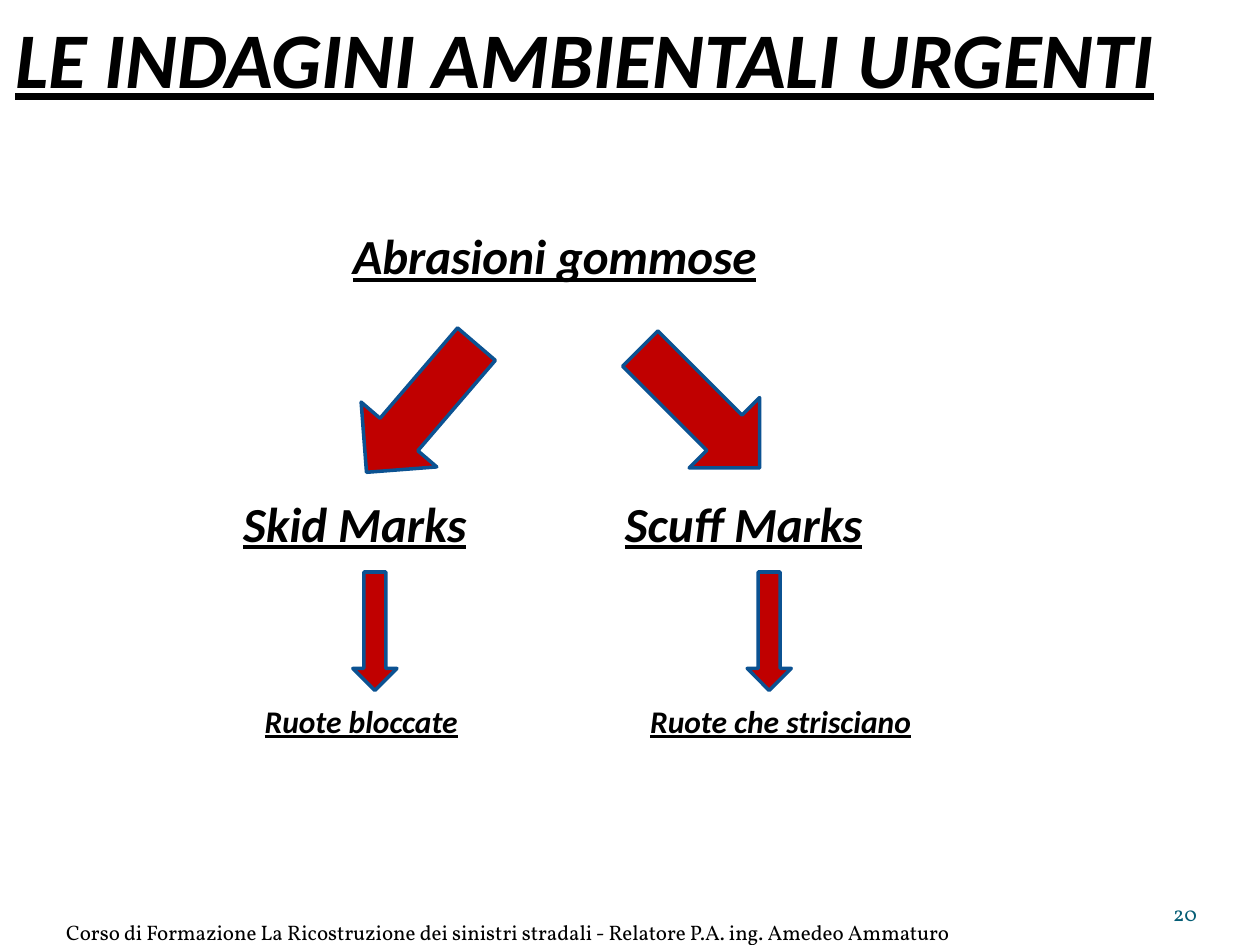
from pptx import Presentation
from pptx import util as u
from pptx.dml import color
from pptx.enum import shapes, text

COLORS = {"ink": "000000", "number": "045D75", "arrow": "C00000", "outline": "0B5292"}
HEADING = {"name": "Calibri", "bold": True, "italic": True, "underline": True}
FOOTER = {"name": "Vollkorn"}
LEFT, CENTER, RIGHT = text.PP_ALIGN.LEFT, text.PP_ALIGN.CENTER, text.PP_ALIGN.RIGHT


def rgb(key):
    return color.RGBColor.from_string(COLORS[key])


def write(holder, words, size, style, ink="ink", align=LEFT, top_inset=0.05):
    frame = holder.text_frame
    layout = {
        "word_wrap": True,
        "auto_size": text.MSO_AUTO_SIZE.NONE,
        "vertical_anchor": text.MSO_ANCHOR.BOTTOM,
        "margin_left": 0,
        "margin_top": u.Inches(top_inset),
        "margin_right": 0,
        "margin_bottom": 0,
    }
    for key, value in layout.items():
        setattr(frame, key, value)
    paragraph = frame.paragraphs[0]
    paragraph.alignment = align
    run = paragraph.add_run()
    run.text = words
    for key, value in {**style, "size": u.Pt(size)}.items():
        setattr(run.font, key, value)
    run.font.color.rgb = rgb(ink)


def add_label(slide, box, words, size, style=HEADING, **options):
    label = slide.shapes.add_textbox(*map(u.Inches, box))
    write(label, words, size, style, **options)


def add_arrow(slide, box, rotation=0):
    arrow = slide.shapes.add_shape(shapes.MSO_SHAPE.DOWN_ARROW, *map(u.Inches, box))
    arrow.rotation = rotation
    arrow.shadow.inherit = False
    arrow.fill.solid()
    arrow.fill.fore_color.rgb = rgb("arrow")
    arrow.line.color.rgb = rgb("outline")
    arrow.line.width = u.Pt(2)


def add_title(slide, box, words):
    title = slide.shapes.title
    for key, value in zip(("left", "top", "width", "height"), box):
        setattr(title, key, u.Inches(value))
    write(title, words, 45, HEADING)


def add_footer(slide, credit_box, number_box):
    add_label(slide, number_box, "20", 12, FOOTER, ink="number", align=RIGHT, top_inset=0)
    add_label(
        slide, credit_box,
        "Corso di Formazione La Ricostruzione dei sinistri stradali - "
        "Relatore P.A. ing. Amedeo Ammaturo",
        12, FOOTER, align=CENTER, top_inset=0,
    )


def add_branch(slide, box, mark, mark_width, wheels, wheels_span, slanted, rotation, down_left):
    left, top = box
    wheels_left, wheels_width = wheels_span
    add_arrow(slide, (slanted, top, 0.79, 1.34), rotation)
    add_label(slide, (left, top + 1.02, mark_width, 0.79), mark, 28)
    add_arrow(slide, (down_left, top + 1.97, 0.35, 0.94))
    add_label(slide, (wheels_left, top + 2.75, wheels_width, 0.55), wheels, 18)


def main():
    deck = Presentation()
    deck.slide_width, deck.slide_height = u.Inches(10), u.Inches(7.5)
    slide = deck.slides.add_slide(deck.slide_layouts[5])
    add_footer(slide, (0, 7.1, 8.07, 0.4), (8.67, 6.95, 0.83, 0.4))
    add_title(slide, (0.12, -0.03, 9.55, 0.86), "LE INDAGINI AMBIENTALI URGENTI")
    add_label(slide, (2.8, 1.47, 4.33, 0.79), "Abrasioni gommose", 28)
    add_branch(slide, (1.93, 2.57), "Skid Marks", 2.44,
               "Ruote bloccate", (2.1, 1.96), 2.95, 40.6, 2.8)
    add_branch(slide, (4.96, 2.57), "Scuff Marks", 2.17,
               "Ruote che strisciano", (5.16, 2.74), 5.16, 315, 5.93)
    deck.save("out.pptx")


if __name__ == "__main__":
    main()
